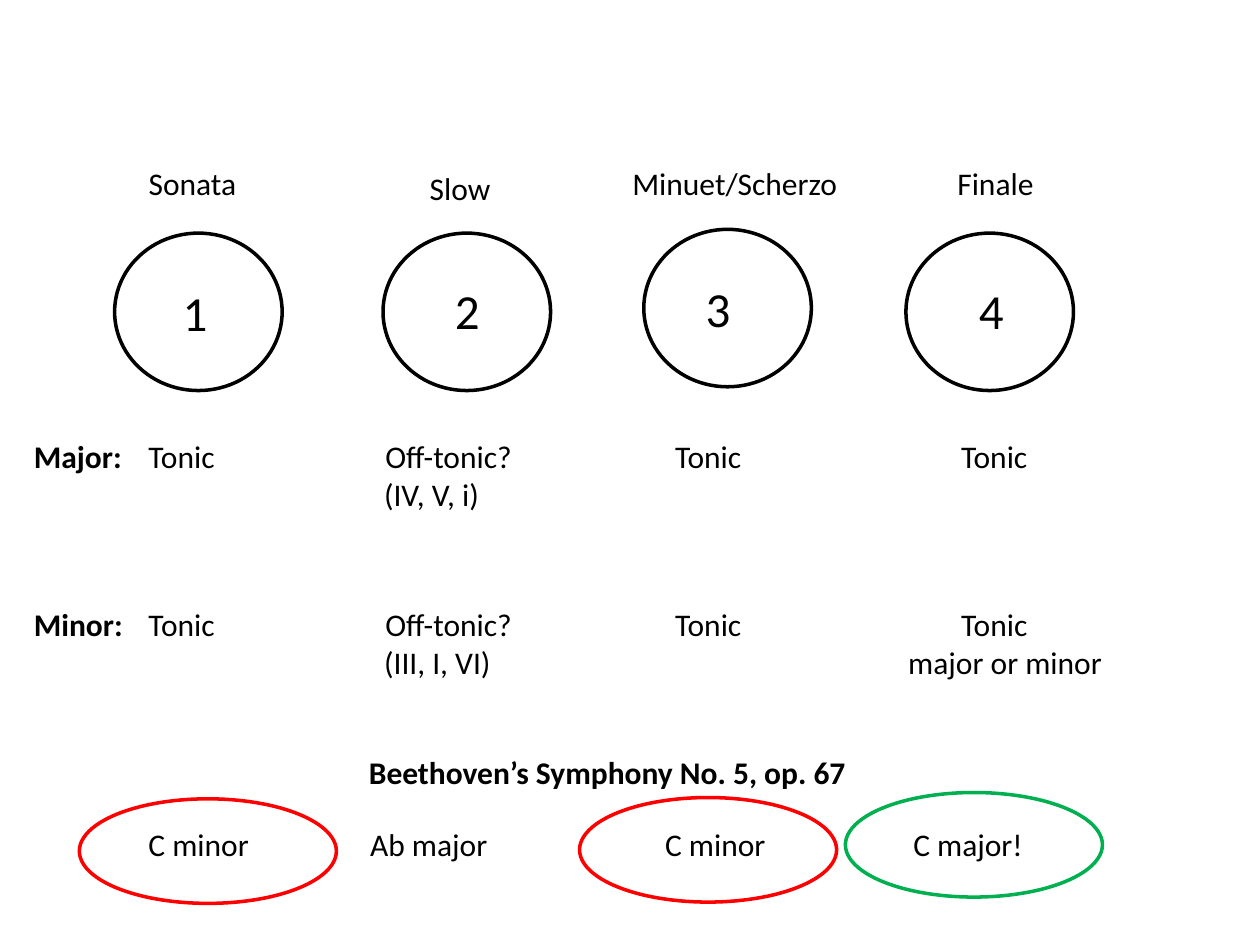
from lxml.etree import SubElement
from pptx import Presentation
from pptx.dml.color import RGBColor
from pptx.enum.shapes import MSO_SHAPE as Shape
from pptx.oxml.ns import qn
from pptx.util import Inches, Pt

BLACK = RGBColor(0x00, 0x00, 0x00)
RED = RGBColor(0xFF, 0x00, 0x00)
GREEN = RGBColor(0x00, 0xB0, 0x50)
FONT = "Calibri"

MOVEMENTS = [
    (0.91, 1.85, (1.29, 2.19), "1"),
    (3.04, 1.85, (3.45, 2.18), "2"),
    (5.11, 1.82, (5.44, 2.16), "3"),
    (7.19, 1.85, (7.61, 2.18), "4"),
]
FORMS = [
    ("Sonata", 0.91, 1.25, 1.33, 0.27),
    ("Slow", 3.14, 1.29, 1.0, 0.27),
    ("Minuet/Scherzo", 4.92, 1.25, 1.98, 0.1),
    ("Finale", 7.5, 1.25, 1.33, 0.1),
]
TONIC_ROW = (["Tonic", "Off-tonic?", "Tonic", "Tonic"], [1.88, 4.18, 6.45])
KEY_ROWS = [
    ("Major:", 3.42, 7.67, (["", "(IV, V, i)"], [1.87])),
    ("Minor:", 4.75, 8.25, (["", "(III, I, VI)", "major or minor"], [1.87, 6.03])),
]
SYMPHONY_ROW = (["C minor", "Ab major", "C minor", "C major!"], [1.76, 4.1, 6.07])
KEY_RINGS = [(0.63, 6.34, RED), (4.6, 6.33, RED), (6.71, 6.29, GREEN)]


def add_ellipse(slide, left, top, width, height, color):
    """Add an unfilled ellipse with a coloured outline."""
    sp = slide.shapes.add_shape(
        Shape.OVAL, Inches(left), Inches(top), Inches(width), Inches(height))
    sp.shadow.inherit = False
    sp.fill.background()
    sp.line.color.rgb = color
    sp.line.width = Pt(2)


def add_run(p, text, size=18, bold=False):
    """Add a black run to a paragraph."""
    r = p.add_run()
    r.text = text
    r.font.name = FONT
    r.font.size = Pt(size)
    r.font.bold = bold
    r.font.color.rgb = BLACK


def add_box(slide, left, top, width, height, inset=0.1):
    """Add a wrapping text box and return its text frame."""
    sp = slide.shapes.add_textbox(
        Inches(left), Inches(top), Inches(width), Inches(height))
    tf = sp.text_frame
    tf.word_wrap = True
    tf.margin_left = Inches(inset)
    return tf


def add_label(slide, text, left, top, width, height=0.4, inset=0.1, size=18, bold=False):
    """Add a text box holding one line."""
    tf = add_box(slide, left, top, width, height, inset)
    add_run(tf.paragraphs[0], text, size, bold)


def set_tabs(p, stops):
    """Give a paragraph left-aligned tab stops, in inches."""
    tabs = SubElement(p._p.get_or_add_pPr(), qn("a:tabLst"))
    for stop in stops:
        SubElement(tabs, qn("a:tab"), pos=str(Inches(stop)), algn="l")


def add_tabbed_rows(slide, left, top, width, height, rows):
    """Add a text box whose lines are columns set by tab stops."""
    tf = add_box(slide, left, top, width, height)
    for i, (cells, stops) in enumerate(rows):
        p = tf.add_paragraph() if i else tf.paragraphs[0]
        set_tabs(p, stops)
        add_run(p, "\t".join(cells))


def main():
    """Build the slide on movement forms and keys."""
    prs = Presentation()
    prs.slide_width, prs.slide_height = Inches(10), Inches(7.5)
    slide = prs.slides.add_slide(prs.slide_layouts[6])

    for left, top, (num_left, num_top), number in MOVEMENTS:
        add_ellipse(slide, left, top, 1.33, 1.25, BLACK)
        add_label(slide, number, num_left, num_top, 0.5, 0.57, inset=0.16, size=28)
    for text, left, top, width, inset in FORMS:
        add_label(slide, text, left, top, width, inset=inset)

    for mode, top, width, detail_row in KEY_ROWS:
        add_label(slide, mode, 0.17, top, 0.91, bold=True)
        add_tabbed_rows(slide, 1.08, top, width, 0.71, [TONIC_ROW, detail_row])

    add_label(slide, "Beethoven’s Symphony No. 5, op. 67", 2.83, 5.93, 4.67, 0.42, bold=True)
    add_tabbed_rows(slide, 1.08, 6.5, 7.67, 0.4, [SYMPHONY_ROW])
    for left, top, color in KEY_RINGS:
        add_ellipse(slide, left, top, 2.04, 0.83, color)

    prs.save("out.pptx")


if __name__ == "__main__":
    main()
